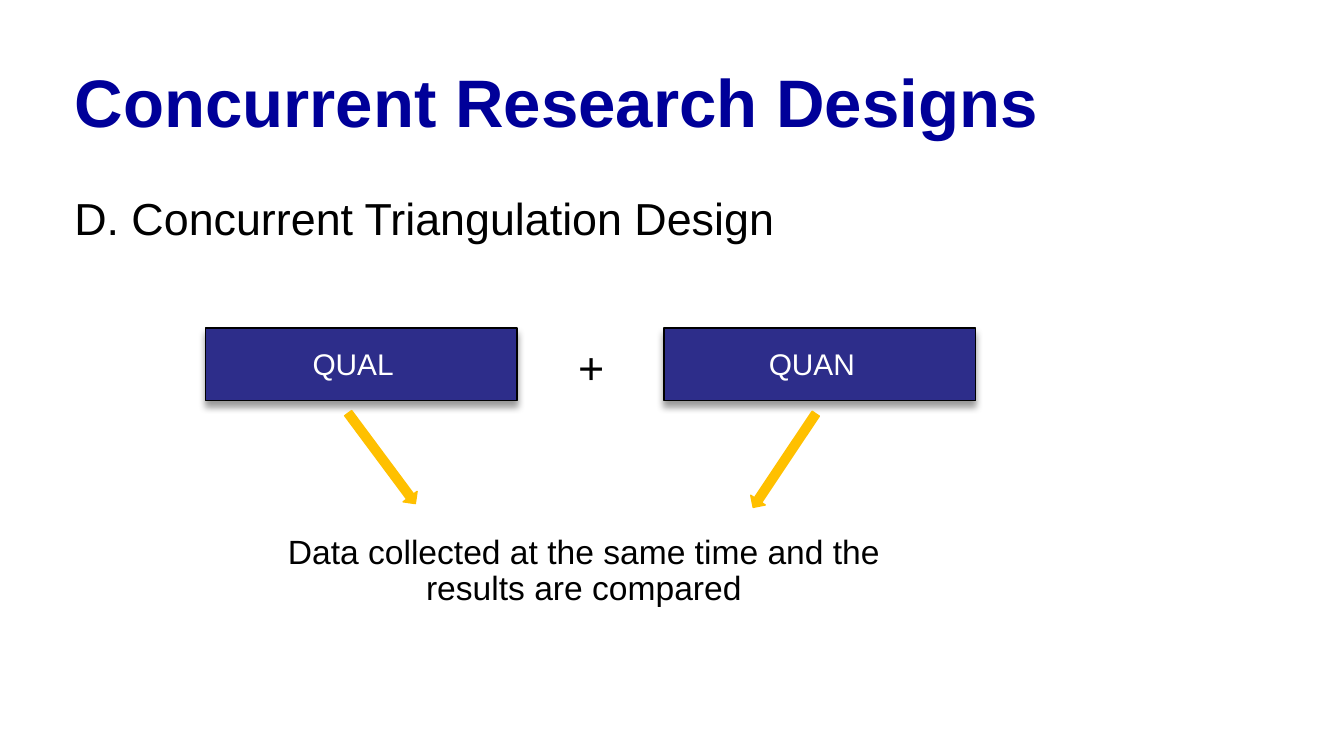
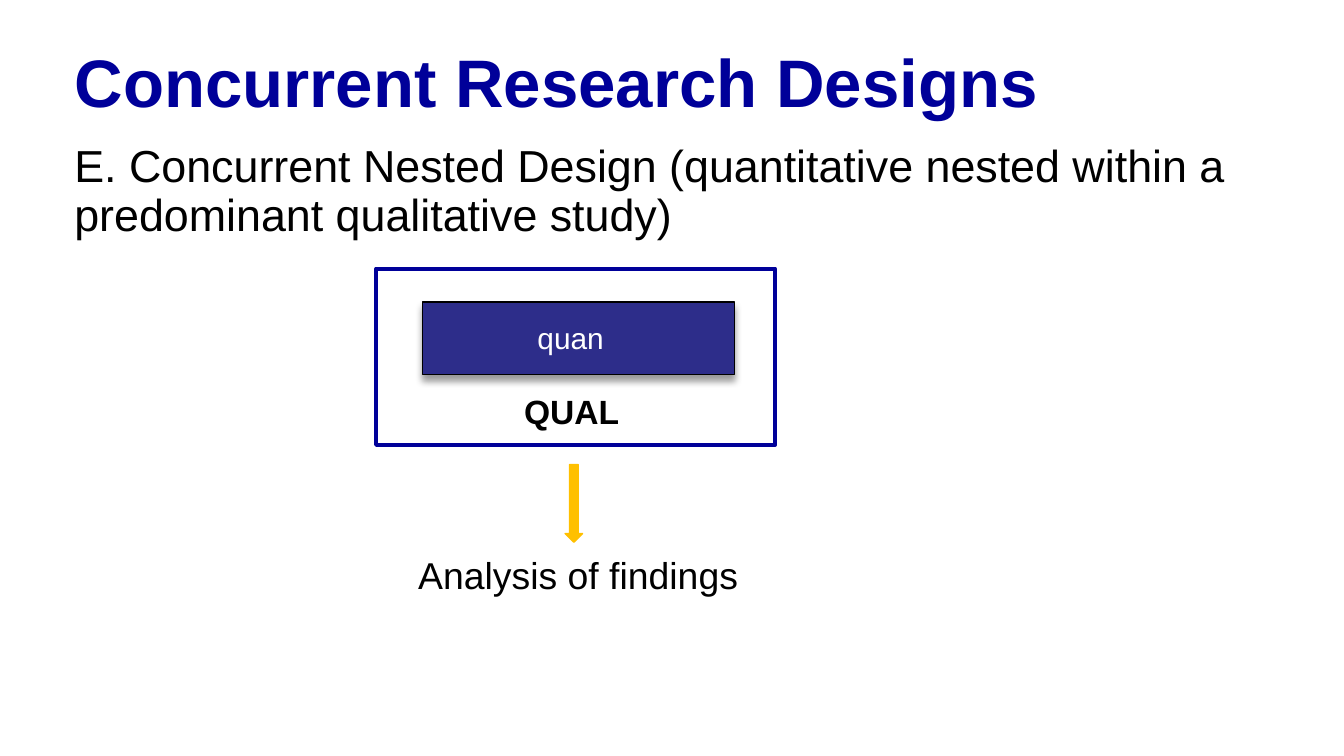
import pptx
import pptx.util
import pptx.dml.color
import pptx.enum.shapes
import pptx.enum.text
import pptx.oxml
import pptx.oxml.ns

NAVY, BLUE, GOLD, BLACK, WHITE = "000099", "2D2D8A", "FFC000", "000000", "FFFFFF"
TITLE = "Concurrent Research Designs"
BOX = (5.89, 1.37)

SLIDES = [
    dict(
        top=1.19,
        head=("D. Concurrent Triangulation Design", 3.6),
        frames=[],
        boxes=[("QUAN", 12.55, 6.2), ("QUAL", 3.88, 6.2)],
        arrows=[(13.76, 8.54, 2.13, 123.7), (6.15, 8.5, 2.13, 53.4)],
        notes=[
            ("+", (10.39, 6.3, 1.57, 1.27), dict(size=24)),
            ("Data collected at the same time and the results are compared",
             (4.76, 9.99, 12.55, 1.12), dict(size=18, lead=0.9)),
        ],
    ),
    dict(
        top=0.81,
        head=("E. Concurrent Nested Design (quantitative nested within a "
              "predominant qualitative study)", 2.6),
        frames=[(7.11, 5.08, 7.54, 3.33)],
        boxes=[("quan", 7.99, 5.71)],
        arrows=[(10.11, 9.35, 1.47, 90)],
        notes=[
            ("Analysis of findings", (6.94, 10.32, 7.98, 1.12), dict(size=20)),
            ("QUAL", (8.76, 7.26, 4.09, 1.02), dict(size=18, bold=True)),
        ],
    ),
]

SHADE = (
    '<a:outerShdw %s blurRad="50800" dist="38100" dir="5400000" rotWithShape="0">'
    '<a:srgbClr val="000000"><a:alpha val="40000"/></a:srgbClr></a:outerShdw>'
    % pptx.oxml.ns.nsdecls("a")
)
PLAIN = "<a:buNone %s/>" % pptx.oxml.ns.nsdecls("a")


def color(code):
    return pptx.dml.color.RGBColor.from_string(code)


def place(at):
    return [pptx.util.Cm(n) for n in at]


def write(shape, text, size=16, ink=BLACK, bold=False, align="CENTER", lead=1):
    frame = shape.text_frame
    frame.word_wrap = True
    frame.auto_size = pptx.enum.text.MSO_AUTO_SIZE.NONE
    frame.vertical_anchor = pptx.enum.text.MSO_ANCHOR.TOP
    frame.text = text
    para = frame.paragraphs[0]
    para.alignment = getattr(pptx.enum.text.PP_ALIGN, align)
    para.line_spacing = lead
    para.space_before = pptx.util.Pt(0)
    font = para.runs[0].font
    font.name = "Arial"
    font.size = pptx.util.Pt(size)
    font.bold = bold
    font.color.rgb = color(ink)


def fill_in(holder, text, at, **look):
    holder.left, holder.top, holder.width, holder.height = place(at)
    write(holder, text, align="LEFT", lead=0.9, **look)
    props = holder.text_frame.paragraphs[0]._p.get_or_add_pPr()
    props.set("marL", "0")
    props.set("indent", "0")
    props.append(pptx.oxml.parse_xml(PLAIN))


def label(slide, text, at, **look):
    write(slide.shapes.add_textbox(*place(at)), text, **look)


def draw(slide, kind, at, fill, line, width=0.75):
    kind = getattr(pptx.enum.shapes.MSO_SHAPE, kind)
    shape = slide.shapes.add_shape(kind, *place(at))
    if fill:
        shape.fill.solid()
        shape.fill.fore_color.rgb = color(fill)
    else:
        shape.fill.background()
    shape.line.color.rgb = color(line)
    shape.line.width = pptx.util.Pt(width)
    shape.shadow.inherit = False
    return shape


def add_box(slide, text, left, top):
    box = draw(slide, "RECTANGLE", (left, top, *BOX), BLUE, BLACK)
    glow = box._element.spPr.find(pptx.oxml.ns.qn("a:effectLst"))
    glow.append(pptx.oxml.parse_xml(SHADE))
    label(slide, text, (left + 0.33, top + 0.21, 4.93, 0.94), ink=WHITE)


def build(deck, data):
    slide = deck.slides.add_slide(deck.slide_layouts[1])
    fill_in(slide.shapes.title, TITLE, (1.16, data["top"], 23.04, 1.8),
            size=36, ink=NAVY, bold=True)
    text, top = data["head"]
    fill_in(slide.placeholders[1], text, (1.15, top, 23.01, 1.12), size=24)
    for at in data["frames"]:
        draw(slide, "RECTANGLE", at, None, NAVY, 2.25)
    for item in data["boxes"]:
        add_box(slide, *item)
    for left, top, width, turn in data["arrows"]:
        arrow = draw(slide, "RIGHT_ARROW", (left, top, width, 0.33), GOLD, GOLD)
        arrow.rotation = turn
    for text, at, look in data["notes"]:
        label(slide, text, at, **look)


def main():
    deck = pptx.Presentation()
    deck.slide_width, deck.slide_height = place((25.4, 14.29))
    for data in SLIDES:
        build(deck, data)
    deck.save("out.pptx")


if __name__ == "__main__":
    main()
